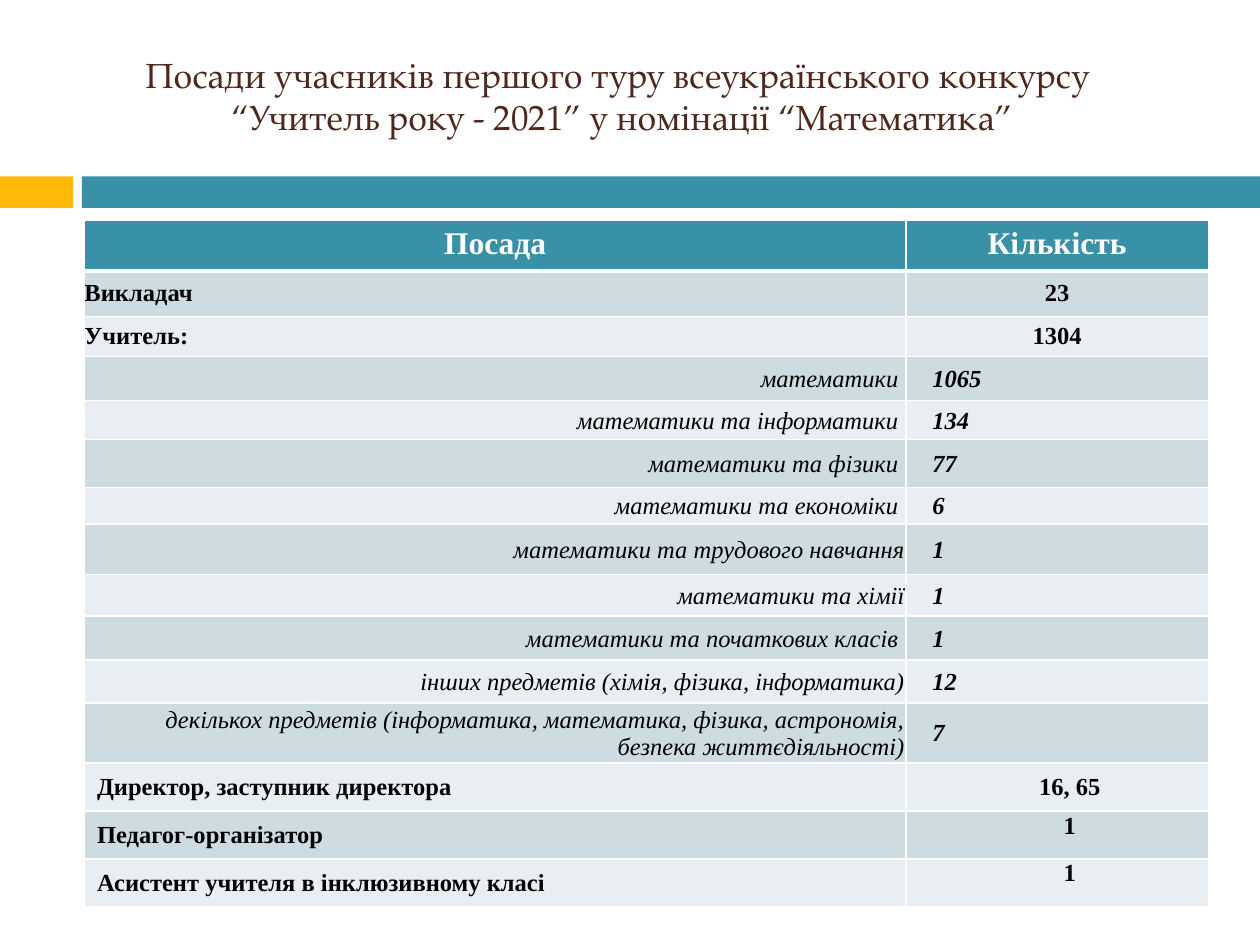
from dataclasses import dataclass
from typing import Any

from lxml import etree
from pptx import Presentation
from pptx.dml.color import RGBColor
from pptx.enum import shapes, text
from pptx.oxml import ns
from pptx.util import Inches, Pt

COLORS = {
    "white": "FFFFFF",
    "black": "000000",
    "title": "4F271C",
    "teal": "3891A7",
    "amber": "FEB80A",
    "odd": "CEDCE1",
    "even": "E8EEF1",
}
LEFT, CENTER, RIGHT = text.PP_ALIGN.LEFT, text.PP_ALIGN.CENTER, text.PP_ALIGN.RIGHT
TOP, MIDDLE = text.MSO_ANCHOR.TOP, text.MSO_ANCHOR.MIDDLE

HEADER = ("Посада", "Кількість")
MAIN_POSITIONS = [("Викладач", "23"), ("Учитель:", "1304")]
TEACHER_SUBJECTS = [
    ("математики ", "1065"),
    ("математики та інформатики ", "134"),
    ("математики та фізики ", "77"),
    ("математики та економіки ", "6"),
    ("математики та трудового навчання", "1"),
    ("математики та хімії", "1"),
    ("математики та початкових класів ", "1"),
    ("інших предметів (хімія, фізика, інформатика)", "12"),
    ("декількох предметів (інформатика, математика, фізика, астрономія, "
     "безпека життєдіяльності)", "7"),
]
OTHER_POSITIONS = [
    ("Директор, заступник директора", "16, 65"),
    ("Педагог-організатор", "1"),
    ("Асистент учителя в інклюзивному класі", "1"),
]
COLUMN_WIDTHS = [6.52, 2.4]
ROW_HEIGHTS = [0.39, 0.36, 0.32, 0.35, 0.31, 0.38, 0.29, 0.4,
               0.33, 0.35, 0.34, 0.46, 0.38, 0.38, 0.38]


@dataclass
class CellStyle:
    align: Any = LEFT
    anchor: Any = MIDDLE
    size: int = 14
    color: str = "black"
    bold: bool = True
    italic: bool = False
    margins: tuple = (0.01, 0.01, 0.01, 0)
    indent: float = 0


class SlideBuilder:
    title_font = "TeX Gyre Pagella"
    table_font = "Times New Roman"

    def __init__(self, slide):
        self.slide = slide

    def color(self, name):
        return RGBColor.from_string(COLORS[name])

    def format_runs(self, paragraph, font_name, size, color, bold=False, italic=False):
        for run in paragraph.runs:
            font = run.font
            font.name, font.size = font_name, Pt(size)
            font.bold, font.italic = bold, italic
            font.color.rgb = self.color(color)

    def bar(self, left, top, width, height, color):
        shape = self.slide.shapes.add_shape(
            shapes.MSO_SHAPE.RECTANGLE,
            Inches(left), Inches(top), Inches(width), Inches(height))
        shape.shadow.inherit = False
        shape.fill.solid()
        shape.fill.fore_color.rgb = self.color(color)
        shape.line.fill.background()

    def title(self, left, top, width, height, words):
        box = self.slide.shapes.add_textbox(
            Inches(left), Inches(top), Inches(width), Inches(height))
        frame = box.text_frame
        frame.word_wrap = True
        frame.vertical_anchor = MIDDLE
        frame.text = words
        paragraph = frame.paragraphs[0]
        paragraph.alignment = CENTER
        self.format_runs(paragraph, self.title_font, 20, "title")

    def table(self, left, top, column_widths, row_heights):
        table = self.slide.shapes.add_table(
            len(row_heights), len(column_widths), Inches(left), Inches(top),
            Inches(sum(column_widths)), Inches(sum(row_heights))).table
        for column, width in zip(table.columns, column_widths):
            column.width = Inches(width)
        for row, height in zip(table.rows, row_heights):
            row.height = Inches(height)
        return table

    def borders(self, cell, **widths):
        properties = cell._tc.get_or_add_tcPr()
        for side in "LRTB":
            line = etree.SubElement(properties, ns.qn(f"a:ln{side}"),
                                    w=str(Pt(widths.get(side, 1))))
            fill = etree.SubElement(line, ns.qn("a:solidFill"))
            etree.SubElement(fill, ns.qn("a:srgbClr"), val=COLORS["white"])

    def cell(self, cell, words, style, fill):
        cell.text_frame.text = words
        cell.vertical_anchor = style.anchor
        (cell.margin_left, cell.margin_right,
         cell.margin_top, cell.margin_bottom) = map(Inches, style.margins)
        cell.fill.solid()
        cell.fill.fore_color.rgb = self.color(fill)
        paragraph = cell.text_frame.paragraphs[0]
        paragraph.alignment = style.align
        if style.indent:
            properties = paragraph._p.get_or_add_pPr()
            properties.set("marL", str(Inches(style.indent)))
            properties.set("indent", "0")
        self.format_runs(paragraph, self.table_font, style.size, style.color,
                         style.bold, style.italic)


def table_rows():
    header = CellStyle(CENTER, TOP, 18, "white", margins=(0.1, 0.1, 0.05, 0.05))
    flush = (0, 0, 0, 0)
    yield HEADER, (header, header)
    for row in MAIN_POSITIONS:
        yield row, (CellStyle(margins=flush), CellStyle(CENTER, margins=flush))
    for row in TEACHER_SUBJECTS:
        yield row, (CellStyle(RIGHT, bold=False, italic=True, indent=0.09),
                    CellStyle(italic=True, indent=0.2))
    for index, row in enumerate(OTHER_POSITIONS):
        anchor = TOP if index else MIDDLE
        yield row, (CellStyle(indent=0.09), CellStyle(CENTER, anchor, indent=0.2))


def main():
    presentation = Presentation()
    presentation.slide_width, presentation.slide_height = Inches(10), Inches(7.5)
    slide = presentation.slides.add_slide(presentation.slide_layouts[6])
    builder = SlideBuilder(slide)

    builder.bar(0, 1.4, 0.58, 0.25, "amber")
    builder.bar(0.65, 1.4, 9.35, 0.25, "teal")
    builder.title(0.28, 0.25, 9.31, 1.02,
                  "Посади учасників першого туру всеукраїнського конкурсу \v"
                  "“Учитель року - 2021” у номінації “Математика”")

    table = builder.table(0.67, 1.75, COLUMN_WIDTHS, ROW_HEIGHTS)
    for index, (row, styles) in enumerate(table_rows()):
        fill = "teal" if index == 0 else "odd" if index % 2 else "even"
        for column, (words, style) in enumerate(zip(row, styles)):
            cell = table.cell(index, column)
            builder.borders(cell, T=3 if index == 1 else 1, B=3 if index == 0 else 1)
            builder.cell(cell, words, style, fill)

    presentation.save("out.pptx")


if __name__ == "__main__":
    main()
